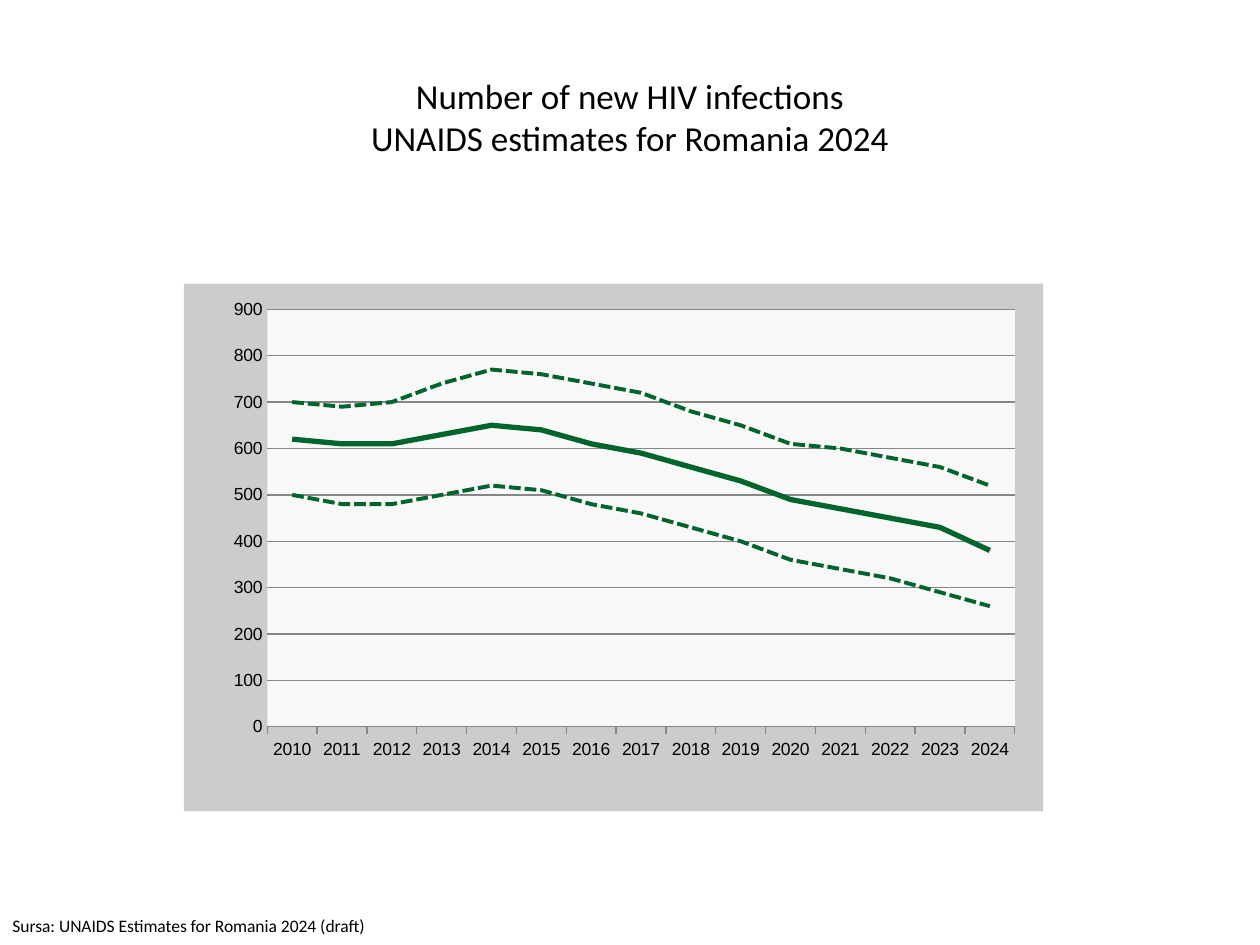
from lxml.etree import SubElement
from pptx import Presentation
from pptx.chart.data import CategoryChartData
from pptx.dml.color import RGBColor
from pptx.enum.chart import XL_CHART_TYPE, XL_MARKER_STYLE, XL_TICK_MARK
from pptx.enum.dml import MSO_LINE
from pptx.enum.text import MSO_ANCHOR, MSO_AUTO_SIZE, PP_ALIGN
from pptx.oxml import parse_xml
from pptx.oxml.ns import nsdecls, qn
from pptx.util import Pt

PX = 9144
GREEN = "00642D"
YEARS = [str(year) for year in range(2010, 2025)]
ESTIMATES = [
    ("Series 1", 3, MSO_LINE.SOLID,
     [620, 610, 610, 630, 650, 640, 610, 590, 560, 530, 490, 470, 450, 430, 380]),
    ("Series 2", 2.25, MSO_LINE.SQUARE_DOT,
     [500, 480, 480, 500, 520, 510, 480, 460, 430, 400, 360, 340, 320, 290, 260]),
    ("Series 3", 2.25, MSO_LINE.SQUARE_DOT,
     [700, 690, 700, 740, 770, 760, 740, 720, 680, 650, 610, 600, 580, 560, 520]),
]


def color(value):
    """Return the colour for a hex string."""
    return RGBColor.from_string(value)


def emu(box):
    """Turn a box in px into EMU lengths."""
    return [length * PX for length in box]


def style_font(font, size, name):
    """Set size, typeface and black colour."""
    font.size = Pt(size)
    font.name = name
    font.color.rgb = color("000000")


def add_text_run(paragraph, text, size):
    """Add one black Calibri run."""
    run = paragraph.add_run()
    run.text = text
    style_font(run.font, size, "Calibri")


def place_title(slide, box, lines):
    """Place the centred title, one line after another."""
    title = slide.shapes.title
    title.left, title.top, title.width, title.height = emu(box)
    frame = title.text_frame
    frame.vertical_anchor = MSO_ANCHOR.MIDDLE
    heading = frame.paragraphs[0]
    heading.alignment = PP_ALIGN.CENTER
    for index, line in enumerate(lines):
        if index:
            heading.add_line_break()
        add_text_run(heading, line, 20)


def solid_area(value):
    """Return borderless shape properties with a solid fill."""
    return parse_xml(
        f'<c:spPr {nsdecls("c", "a")}><a:solidFill><a:srgbClr val="{value}"/>'
        "</a:solidFill><a:ln><a:noFill/></a:ln></c:spPr>")


def format_areas(chart, plot_box):
    """Fill the chart and plot areas and fix the inner plot position."""
    space = chart.element
    space.find(qn("c:chart")).addnext(solid_area("CCCCCC"))
    plot_area = space.find(".//" + qn("c:plotArea"))
    for automatic in plot_area.findall(qn("c:layout")):
        plot_area.remove(automatic)
    layout = parse_xml(f'<c:layout {nsdecls("c")}><c:manualLayout/></c:layout>')
    settings = [("layoutTarget", "inner"), ("xMode", "edge"), ("yMode", "edge")]
    settings += zip("xywh", plot_box)
    for tag, value in settings:
        SubElement(layout[0], qn("c:" + tag)).set("val", str(value))
    plot_area.insert(0, layout)
    plot_area.append(solid_area("F8F8F8"))


def format_axes(chart):
    """Format the year axis and the gridded value axis."""
    years, infections = chart.category_axis, chart.value_axis
    years.major_tick_mark = XL_TICK_MARK.OUTSIDE
    infections.major_tick_mark = XL_TICK_MARK.NONE
    infections.minimum_scale, infections.maximum_scale = 0, 900
    infections.major_unit = 100
    infections.tick_labels.number_format = "#,##0"
    infections.tick_labels.number_format_is_linked = False
    infections.format.line.fill.background()
    infections.has_major_gridlines = True
    for line in (years.format.line, infections.major_gridlines.format.line):
        line.color.rgb = color("868686")
        line.width = Pt(0.75)


def add_infections_chart(slide, box):
    """Draw the estimate between its dashed lower and upper bounds."""
    data = CategoryChartData()
    data.categories = YEARS
    for name, _, _, values in ESTIMATES:
        data.add_series(name, values)
    chart = slide.shapes.add_chart(XL_CHART_TYPE.LINE, *emu(box), data).chart
    chart.has_title = False
    chart.has_legend = False
    style_font(chart.font, 10, "Arial")
    chart.plots[0].vary_by_categories = False
    for series, (_, width, dash, _) in zip(chart.plots[0].series, ESTIMATES):
        series.smooth = False
        series.marker.style = XL_MARKER_STYLE.NONE
        series.format.line.color.rgb = color(GREEN)
        series.format.line.width = Pt(width)
        series.format.line.dash_style = dash
    format_axes(chart)
    format_areas(chart, (0.097, 0.049, 0.87, 0.791))


def add_source_note(slide, box, text):
    """Place the source line."""
    frame = slide.shapes.add_textbox(*emu(box)).text_frame
    frame.word_wrap = True
    frame.auto_size = MSO_AUTO_SIZE.SHAPE_TO_FIT_TEXT
    add_text_run(frame.paragraphs[0], text, 10)


def main():
    """Build and save the slide."""
    deck = Presentation()
    deck.slide_width, deck.slide_height = emu((1000, 750))
    slide = deck.slides.add_slide(deck.slide_layouts[5])
    place_title(slide, (50, 30, 900, 125),
                ["Number of new HIV infections", "UNAIDS estimates for Romania 2024"])
    add_infections_chart(slide, (146, 225, 682, 419))
    add_source_note(slide, (0, 721, 327, 27),
                    "Sursa: UNAIDS Estimates for Romania 2024 (draft)")
    deck.save("out.pptx")


if __name__ == "__main__":
    main()
